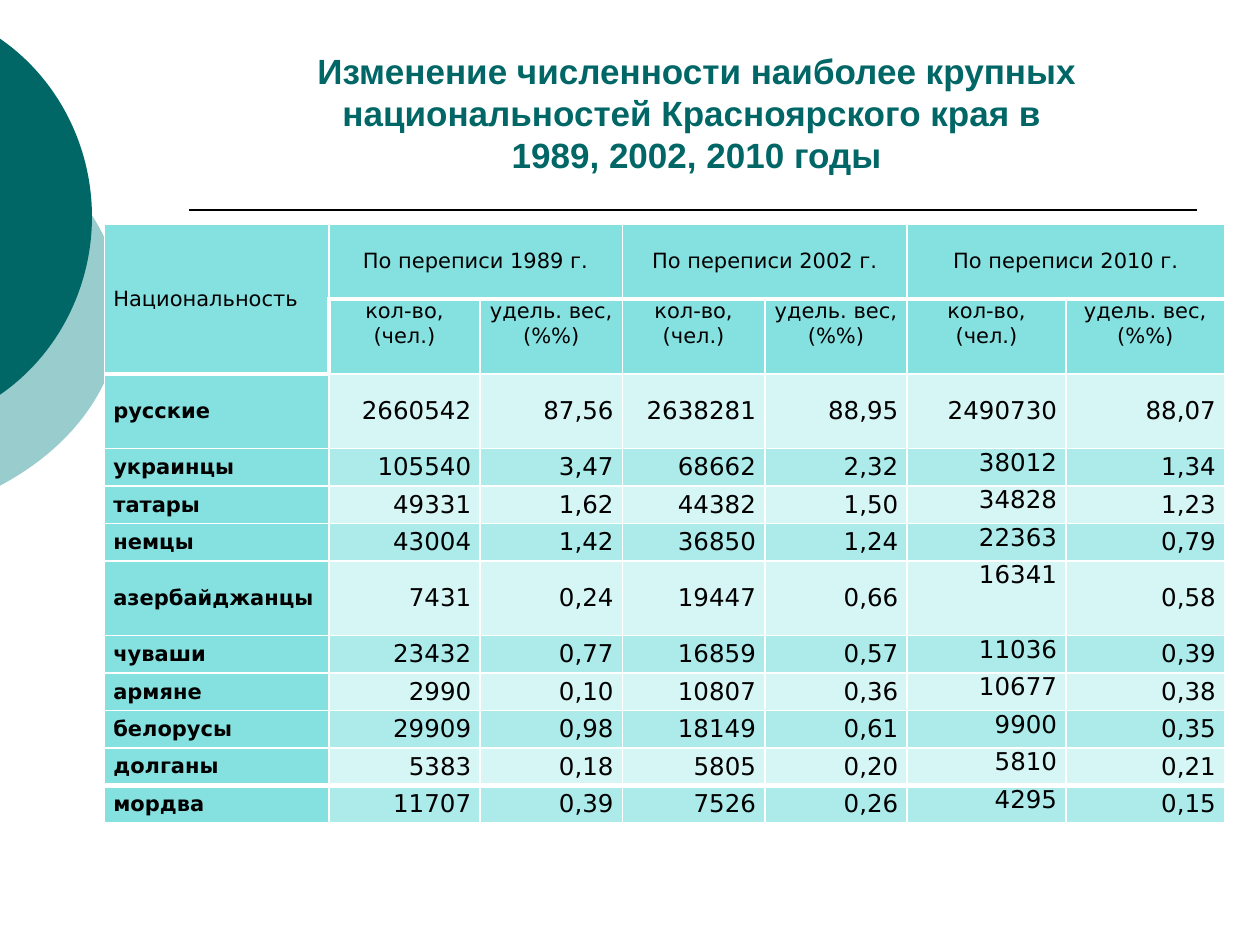
import pptx
import pptx.dml.color
import pptx.enum.shapes
import pptx.enum.text
import pptx.oxml.ns
import pptx.util
from lxml import etree

Inches = pptx.util.Inches
Pt = pptx.util.Pt
qn = pptx.oxml.ns.qn
ALIGN = pptx.enum.text.PP_ALIGN
ANCHOR = pptx.enum.text.MSO_ANCHOR

COLORS = {
    "teal": "006666",
    "pale_teal": "99CCCC",
    "header": "85E0E0",
    "light_band": "D6F5F5",
    "dark_band": "ADEBEB",
    "black": "000000",
    "white": "FFFFFF",
}
TITLE = ("Изменение численности наиболее крупных национальностей "
         "Красноярского края в \v1989, 2002, 2010 годы")
YEARS = (1989, 2002, 2010)
NATIONALITIES = [
    ("русские", "2660542", "87,56", "2638281", "88,95", "2490730", "88,07"),
    ("украинцы", "105540", "3,47", "68662", "2,32", "38012", "1,34"),
    ("татары", "49331", "1,62", "44382", "1,50", "34828", "1,23"),
    ("немцы", "43004", "1,42", "36850", "1,24", "22363", "0,79"),
    ("азербайджанцы", "7431", "0,24", "19447", "0,66", "16341", "0,58"),
    ("чуваши", "23432", "0,77", "16859", "0,57", "11036", "0,39"),
    ("армяне", "2990", "0,10", "10807", "0,36", "10677", "0,38"),
    ("белорусы", "29909", "0,98", "18149", "0,61", "9900", "0,35"),
    ("долганы", "5383", "0,18", "5805", "0,20", "5810", "0,21"),
    ("мордва", "11707", "0,39", "7526", "0,26", "4295", "0,15"),
]
COLUMN_WIDTHS = (1.78, 1.2, 1.13, 1.13, 1.13, 1.26, 1.26)
TALL_ROWS = (0, 1, 2, 6)
HEADER_ROWS = 2
LAST_ROW = HEADER_ROWS + len(NATIONALITIES) - 1


def rgb(name):
    return pptx.dml.color.RGBColor.from_string(COLORS[name])


def style_text(frame, align, font, size, color, bold=False):
    for para in frame.paragraphs:
        para.alignment = align
        for span in para.runs:
            span.font.name = font
            span.font.size = Pt(size)
            span.font.bold = bold
            span.font.color.rgb = rgb(color)


def add_disc_edge(page, left, top, width, height, quarter, color):
    """Draw a disc's right edge; quarter is its upper curve on the page."""
    builder = page.shapes.build_freeform(Inches(left), Inches(top))
    builder.add_line_segments([
        (Inches(left + width), Inches(top)),
        (Inches(left + width), Inches(top + height)),
        (Inches(left), Inches(top + height))])
    disc = builder.convert_to_shape()
    disc.shadow.inherit = False
    disc.fill.solid()
    disc.fill.fore_color.rgb = rgb(color)
    disc.line.fill.background()

    middle = quarter[-1][1]
    lower = [(x, 2 * middle - y) for x, y in reversed(quarter[:-1])]
    outline = next(disc._element.iter(qn("a:path")))
    for command in list(outline):
        outline.remove(command)
    for tag, points in (("moveTo", quarter[:1]),
                        ("cubicBezTo", quarter[1:]),
                        ("cubicBezTo", lower)):
        command = etree.SubElement(outline, qn("a:" + tag))
        for x, y in points:
            etree.SubElement(command, qn("a:pt"), x=str(Inches(x - left)),
                             y=str(Inches(y - top)))
    etree.SubElement(outline, qn("a:close"))


def add_rule(page, left, top, width):
    rule = page.shapes.add_connector(
        pptx.enum.shapes.MSO_CONNECTOR.STRAIGHT,
        Inches(left), Inches(top), Inches(left + width), Inches(top))
    rule.line.color.rgb = rgb("black")
    rule.line.width = Pt(1.25)
    etree.SubElement(rule._element.spPr, qn("a:effectLst"))


def add_title(page, left, top, width, height):
    box = page.shapes.add_textbox(
        Inches(left), Inches(top), Inches(width), Inches(height))
    frame = box.text_frame
    frame.word_wrap = True
    frame.vertical_anchor = ANCHOR.MIDDLE
    frame.margin_bottom = Inches(0.39)
    frame.text = TITLE
    style_text(frame, ALIGN.CENTER, "Arial", 20, "teal", bold=True)


def thick_above(row, column):
    return ((row == 1 and column > 0) or (row == 2 and column == 0)
            or row == LAST_ROW)


def thick_left(row, column):
    return (row, column) == (1, 1)


def set_borders(cell, row, column):
    edges = {
        "lnL": thick_left(row, column),
        "lnR": thick_left(row, column + 1),
        "lnT": thick_above(row, column),
        "lnB": thick_above(row + 1, column),
    }
    properties = cell._tc.get_or_add_tcPr()
    for tag, thick in edges.items():
        line = etree.SubElement(properties, qn("a:" + tag),
                                w=str(Pt(3 if thick else 1)))
        fill = etree.SubElement(line, qn("a:solidFill"))
        etree.SubElement(fill, qn("a:srgbClr"), val=COLORS["white"])


def style_cell(cell, row, column):
    is_header = row < HEADER_ROWS
    is_name = column == 0
    set_borders(cell, row, column)
    if is_header or is_name:
        color = "header"
    else:
        color = "dark_band" if row % 2 else "light_band"
    cell.fill.solid()
    cell.fill.fore_color.rgb = rgb(color)
    cell.margin_left = cell.margin_right = Inches(0.07)
    cell.margin_top = cell.margin_bottom = 0
    at_top = (row == 1 and not is_name) or (column == 5 and row > HEADER_ROWS)
    cell.vertical_anchor = ANCHOR.TOP if at_top else ANCHOR.MIDDLE
    if is_name:
        align = ALIGN.JUSTIFY
    else:
        align = ALIGN.CENTER if is_header else ALIGN.RIGHT
    style_text(cell.text_frame, align, "DejaVu Sans",
               12 if is_header or is_name else 14, "black",
               bold=is_name and not is_header)


def add_census_table(page, left, top, width, height):
    headings = ["Национальность"]
    measures = [""]
    for year in YEARS:
        headings += [f"По переписи {year} г.", ""]
        measures += ["кол-во, (чел.)", "удель. вес, (%%)"]
    rows = [headings, measures, *NATIONALITIES]

    table = page.shapes.add_table(
        len(rows), len(headings),
        Inches(left), Inches(top), Inches(width), Inches(height)).table
    for column, share in zip(table.columns, COLUMN_WIDTHS):
        column.width = Inches(width * share / sum(COLUMN_WIDTHS))
    unit = height / (len(rows) + len(TALL_ROWS))
    for index, row in enumerate(table.rows):
        row.height = Inches(unit * (2 if index in TALL_ROWS else 1))

    for row, texts in enumerate(rows):
        for column, text in enumerate(texts):
            cell = table.cell(row, column)
            cell.text_frame.text = text
            style_cell(cell, row, column)
    table.cell(0, 0).merge(table.cell(1, 0))
    for column in range(1, len(headings), 2):
        table.cell(0, column).merge(table.cell(0, column + 1))


def main():
    deck = pptx.Presentation()
    deck.slide_width = Inches(10)
    deck.slide_height = Inches(7.5)
    page = deck.slides.add_slide(deck.slide_layouts[6])
    add_disc_edge(page, -3.54, 0.75, 4.5, 3.42,
                  [(-0.01, 1.06), (0.6, 1.38), (0.96, 1.9), (0.96, 2.46)],
                  "pale_teal")
    add_disc_edge(page, -2.65, 0, 3.38, 3.45,
                  [(-0.01, 0.3), (0.46, 0.62), (0.73, 1.16), (0.73, 1.72)],
                  "teal")
    add_rule(page, 1.5, 1.67, 8)
    add_title(page, 1.53, 0.44, 8, 1.25)
    add_census_table(page, 0.83, 1.78, 8.89, 4.75)
    deck.save("out.pptx")


if __name__ == "__main__":
    main()
